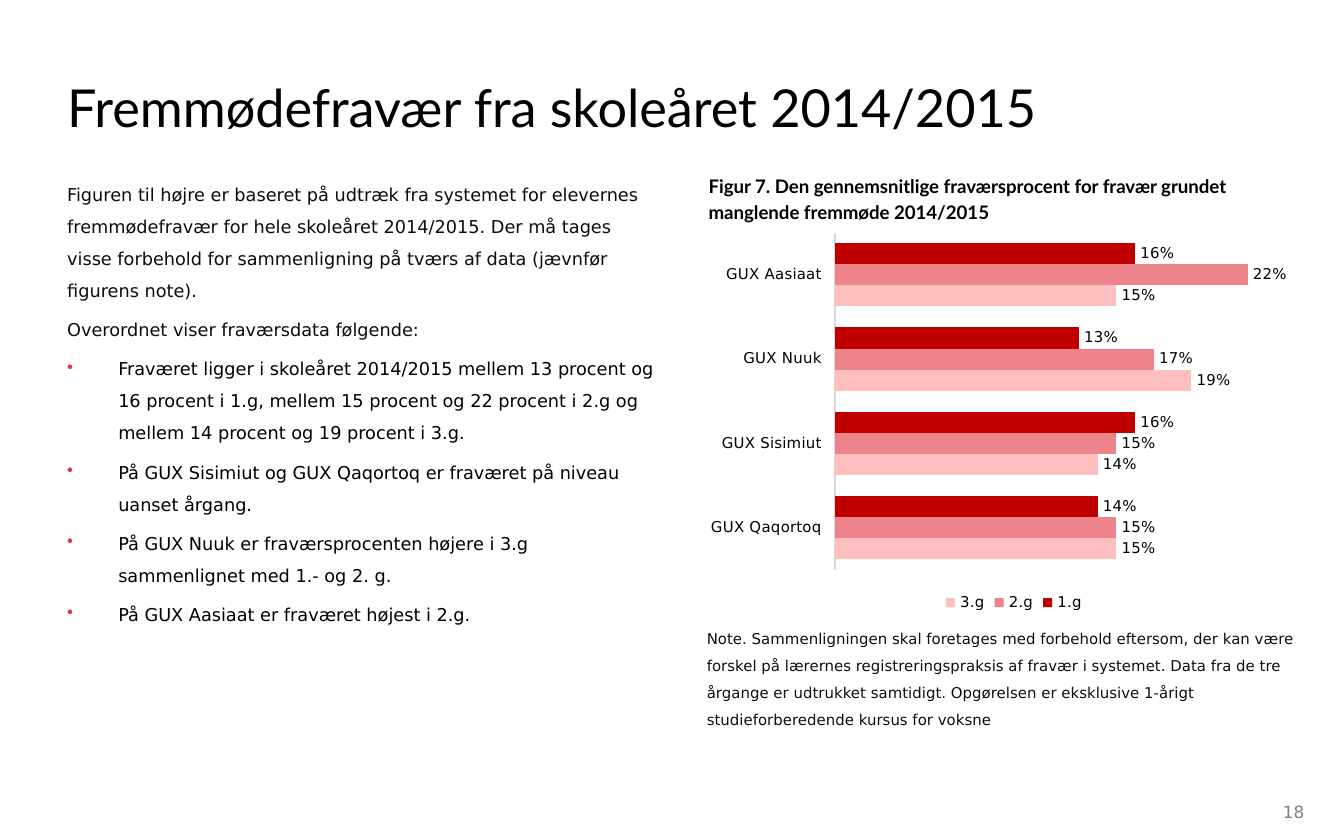
from lxml import etree
from pptx import Presentation
from pptx.chart.data import CategoryChartData
from pptx.dml.color import RGBColor
from pptx.enum.chart import XL_CHART_TYPE as ChartType
from pptx.enum.chart import XL_LABEL_POSITION as LabelPosition
from pptx.enum.chart import XL_LEGEND_POSITION as LegendPosition
from pptx.enum.chart import XL_TICK_LABEL_POSITION as TickLabels
from pptx.enum.chart import XL_TICK_MARK as TickMark
from pptx.enum.text import MSO_ANCHOR as Anchor
from pptx.enum.text import MSO_AUTO_SIZE as AutoSize
from pptx.enum.text import PP_ALIGN as Align
from pptx.oxml import parse_xml
from pptx.oxml.ns import nsdecls, qn
from pptx.util import Inches, Pt

WIDTH, HEIGHT = Inches(10), Inches(6.25)
BODY_FONT, HEAD_FONT = "DejaVu Sans", "Lato"
BLACK = RGBColor(0x00, 0x00, 0x00)
INK = RGBColor(0x0D, 0x0D, 0x0D)
GREY = RGBColor(0x80, 0x80, 0x80)
AXIS_GREY = RGBColor(0xD9, 0xD9, 0xD9)
BULLET_RED = RGBColor(0xE3, 0x32, 0x3D)
DARK_RED = RGBColor(0xC0, 0x00, 0x00)
MID_RED = RGBColor(0xEE, 0x84, 0x8B)
PALE_RED = RGBColor(0xFF, 0xBF, 0xBF)

TITLE = "Fremmødefravær fra skoleåret 2014/2015"
INTRO = [
    "Figuren til højre er baseret på udtræk fra systemet for elevernes "
    "fremmødefravær for hele skoleåret 2014/2015. Der må tages visse forbehold "
    "for sammenligning på tværs af data (jævnfør figurens note).",
    "Overordnet viser fraværsdata følgende:",
]
FINDINGS = [
    "Fraværet ligger i skoleåret 2014/2015 mellem 13 procent og 16 procent i 1.g, "
    "mellem 15 procent og 22 procent i 2.g og mellem 14 procent og 19 procent i 3.g.",
    "På GUX Sisimiut og GUX Qaqortoq er fraværet på niveau uanset årgang.",
    "På GUX Nuuk er fraværsprocenten højere i 3.g sammenlignet med 1.- og 2. g.",
    "På GUX Aasiaat er fraværet højest i 2.g.",
]
CAPTION = ("Figur 7. Den gennemsnitlige fraværsprocent for fravær grundet "
           "manglende fremmøde 2014/2015")
NOTE = ("Note. Sammenligningen skal foretages med forbehold eftersom, der kan være "
        "forskel på lærernes registreringspraksis af fravær i systemet. Data fra de tre "
        "årgange er udtrukket samtidigt. Opgørelsen er eksklusive 1-årigt "
        "studieforberedende kursus for voksne")
SCHOOLS = ["GUX Aasiaat", "GUX Nuuk", "GUX Sisimiut", "GUX Qaqortoq"]
ABSENCE = [
    ("1.g", [0.16, 0.13, 0.16, 0.14], DARK_RED),
    ("2.g", [0.22, 0.17, 0.15, 0.15], MID_RED),
    ("3.g", [0.15, 0.19, 0.14, 0.15], PALE_RED),
]


def share(left, top, width, height, box=(0, 0, WIDTH, HEIGHT)):
    """Return the part of box given by shares of its width and height."""
    x, y, w, h = box
    return (x + round(left * w), y + round(top * h),
            round(width * w), round(height * h))


def style_font(font, size, color, name=BODY_FONT, bold=False):
    font.size, font.name, font.bold = Pt(size), name, bold
    font.color.rgb = color


def prepare_frame(frame, anchor=Anchor.TOP):
    frame.margin_left = frame.margin_right = 0
    frame.margin_top = frame.margin_bottom = 0
    frame.word_wrap = True
    frame.auto_size = AutoSize.NONE
    frame.vertical_anchor = anchor


def add_bullet(paragraph):
    properties = paragraph._p.get_or_add_pPr()
    properties.set("marL", str(Inches(0.38)))
    properties.set("indent", str(-Inches(0.38)))
    color = etree.SubElement(properties, qn("a:buClr"))
    etree.SubElement(color, qn("a:srgbClr"), val=str(BULLET_RED))
    etree.SubElement(properties, qn("a:buChar"), char="•")


def add_text(slide, box, texts, size, color, spacing=1.5, anchor=Anchor.TOP,
             name=BODY_FONT, bold=False):
    frame = slide.shapes.add_textbox(*box).text_frame
    prepare_frame(frame, anchor)
    frame.text = "\n".join(texts)
    for index, paragraph in enumerate(frame.paragraphs):
        paragraph.line_spacing = spacing
        paragraph.space_before = Pt(2 if index else 0)
        paragraph.space_after = Pt(2)
        for run in paragraph.runs:
            style_font(run.font, size, color, name, bold)
    return frame


def place_title(slide, box):
    title = slide.shapes.title
    title.left, title.top, title.width, title.height = box
    prepare_frame(title.text_frame)
    title.text_frame.text = TITLE
    paragraph = title.text_frame.paragraphs[0]
    paragraph.alignment = Align.LEFT
    style_font(paragraph.runs[0].font, 28, BLACK, HEAD_FONT)


def place_findings(slide, box):
    frame = add_text(slide, box, INTRO + FINDINGS, 9.5, INK)
    for paragraph in frame.paragraphs[len(INTRO):]:
        add_bullet(paragraph)
        paragraph.runs[0].font.color.rgb = BLACK


def fix_plot_area(chart, **shares):
    """Set the inner plot area as shares of the chart."""
    plot_area = chart.element.find(".//" + qn("c:plotArea"))
    for layout in plot_area.findall(qn("c:layout")):
        plot_area.remove(layout)
    sizes = "".join(f'<c:{key} val="{value}"/>' for key, value in shares.items())
    plot_area.insert(0, parse_xml(
        f'<c:layout {nsdecls("c")}><c:manualLayout><c:layoutTarget val="inner"/>'
        f'<c:xMode val="edge"/><c:yMode val="edge"/>{sizes}'
        '</c:manualLayout></c:layout>'))


def place_chart(slide, box):
    data = CategoryChartData(number_format="0%")
    data.categories = SCHOOLS
    for year, values, _ in ABSENCE:
        data.add_series(year, values)
    chart = slide.shapes.add_chart(ChartType.BAR_CLUSTERED, *box, data).chart
    style_font(chart.font, 8, BLACK)
    chart.has_title = False
    chart.has_legend = True
    chart.legend.position = LegendPosition.BOTTOM
    chart.legend.include_in_layout = False
    style_font(chart.legend.font, 8, BLACK)
    fix_plot_area(chart, x=0.21, y=0.02, w=0.76, h=0.86)

    schools = chart.category_axis
    schools.reverse_order = True
    schools.major_tick_mark = schools.minor_tick_mark = TickMark.NONE
    schools.tick_label_position = TickLabels.LOW
    schools.format.line.color.rgb = AXIS_GREY
    schools.format.line.width = Pt(0.75)
    style_font(schools.tick_labels.font, 8, BLACK)
    percent = chart.value_axis
    percent.minimum_scale, percent.maximum_scale = 0, 0.25
    percent.has_major_gridlines = False
    percent.visible = False

    plot = chart.plots[0]
    plot.gap_width, plot.overlap = 100, 0
    plot.vary_by_categories = False
    for series, (_, _, color) in zip(plot.series, ABSENCE):
        series.format.fill.solid()
        series.format.fill.fore_color.rgb = color
        labels = series.data_labels
        labels.show_value = True
        labels.position = LabelPosition.OUTSIDE_END
        labels.number_format, labels.number_format_is_linked = "0%", False
        style_font(labels.font, 8, BLACK)


def place_figure(slide, box):
    """Stack caption, chart and note in the box."""
    add_text(slide, share(0.005, 0, 0.96, 0.09, box), [CAPTION], 10, BLACK,
             spacing=1.14, name=HEAD_FONT, bold=True)
    place_chart(slide, share(0, 0.094, 1, 0.7, box))
    add_text(slide, share(0.002, 0.801, 0.96, 0.199, box), [NOTE], 8, INK)


def place_page_number(slide, box):
    frame = add_text(slide, box, ["18"], 9, GREY, spacing=1.2, anchor=Anchor.MIDDLE)
    frame.paragraphs[0].alignment = Align.CENTER


def main():
    deck = Presentation()
    deck.slide_width, deck.slide_height = WIDTH, HEIGHT
    slide = deck.slides.add_slide(deck.slide_layouts[5])
    place_title(slide, share(0.05, 0.09, 0.9, 0.094))
    place_findings(slide, share(0.05, 0.206, 0.441, 0.734))
    place_figure(slide, share(0.525, 0.205, 0.459, 0.667))
    place_page_number(slide, share(0.95, 0.957, 0.025, 0.014))
    deck.save("out.pptx")


if __name__ == "__main__":
    main()
